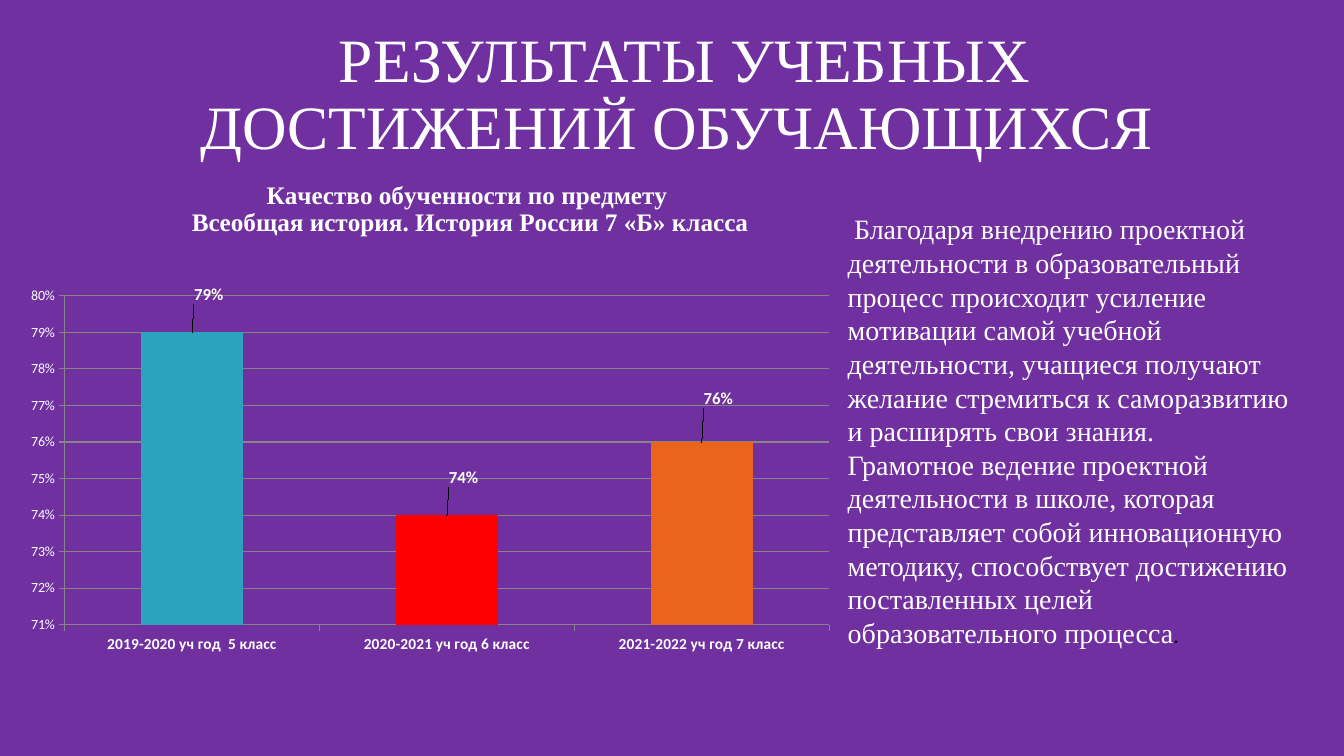
from lxml import etree
from pptx import Presentation
from pptx.chart.data import CategoryChartData
from pptx.dml.color import RGBColor
from pptx.enum.chart import XL_CHART_TYPE, XL_LABEL_POSITION, XL_TICK_MARK
from pptx.enum.text import MSO_ANCHOR, MSO_AUTO_SIZE, PP_ALIGN
from pptx.oxml.ns import qn
from pptx.util import Inches, Pt

COLUMNS = XL_CHART_TYPE.COLUMN_CLUSTERED
OUTSIDE_END = XL_LABEL_POSITION.OUTSIDE_END
TICK_OUT = XL_TICK_MARK.OUTSIDE
MIDDLE = MSO_ANCHOR.MIDDLE
GROW = MSO_AUTO_SIZE.SHAPE_TO_FIT_TEXT
CENTER = PP_ALIGN.CENTER

PURPLE = RGBColor(0x70, 0x30, 0xA0)
WHITE = RGBColor(0xFF, 0xFF, 0xFF)
BLACK = RGBColor(0x00, 0x00, 0x00)
GREY = RGBColor(0x86, 0x86, 0x86)
TEAL = RGBColor(0x2D, 0xA2, 0xBF)
RED = RGBColor(0xFF, 0x00, 0x00)
ORANGE = RGBColor(0xEB, 0x64, 0x1B)
SERIF, SANS = "Times New Roman", "Calibri"

TITLE_FONT = {"size": Pt(44), "name": SERIF}
BODY_FONT = {"size": Pt(20), "name": SERIF}
CHART_TITLE_FONT = {"size": Pt(18), "name": SERIF, "bold": True}
VALUE_FONT = {"size": Pt(10), "name": SANS}
CATEGORY_FONT = {"size": Pt(11), "name": SANS, "bold": True}
LABEL_FONT = {"size": Pt(12), "name": SANS, "bold": True}

TITLE = [[("РЕЗУЛЬТАТЫ УЧЕБНЫХ ДОСТИЖЕНИЙ ОБУЧАЮЩИХСЯ ", TITLE_FONT)]]
BODY = [
    [(" ", {"size": Pt(18), "name": SERIF}),
     ("Благодаря внедрению проектной деятельности в образовательный процесс "
      "происходит усиление мотивации самой учебной", BODY_FONT)],
    [("деятельности, учащиеся получают желание стремиться к саморазвитию "
      "и расширять свои знания. ", BODY_FONT)],
    [("Грамотное ведение проектной деятельности в школе, которая представляет "
      "собой инновационную методику, способствует достижению поставленных целей "
      "образовательного процесса", BODY_FONT),
     (".", {"size": Pt(16), "name": SANS, "color": BLACK})],
]
CHART_TITLE = ["Качество обученности по предмету",
               " Всеобщая история. История России 7 «Б» класса"]
# category, value, bar colour, label shift as fractions of the chart
RESULTS = [
    ("2019-2020 уч год  5 класс", 0.79, TEAL, (0.02, -0.04)),
    ("2020-2021 уч год 6 класс", 0.74, RED, (0.02, -0.04)),
    ("2021-2022 уч год 7 класс", 0.76, ORANGE, (0.02, -0.05)),
]


def set_font(font, color=WHITE, **values):
    for name, value in values.items():
        setattr(font, name, value)
    font.color.rgb = color


def add_text(slide, box, paragraphs, align=None, spacing=None):
    tf = slide.shapes.add_textbox(*map(Inches, box)).text_frame
    tf.word_wrap = True
    tf.vertical_anchor = MIDDLE
    for i, runs in enumerate(paragraphs):
        p = tf.paragraphs[0] if i == 0 else tf.add_paragraph()
        p.alignment, p.line_spacing = align, spacing
        for text, values in runs:
            r = p.add_run()
            r.text = text
            set_font(r.font, **values)
    return tf


def set_layout(parent, position, after):
    """Give a chart part a manual layout, placed after the named child."""
    for old in parent.findall(qn("c:layout")):
        parent.remove(old)
    layout = etree.Element(qn("c:layout"))
    manual = etree.SubElement(layout, qn("c:manualLayout"))
    for name, value in position.items():
        etree.SubElement(manual, qn(f"c:{name}")).set("val", str(value))
    if after is None:
        parent.insert(0, layout)
    else:
        parent.find(qn(after)).addnext(layout)


def style_axis(axis, values):
    axis.major_tick_mark = TICK_OUT
    axis.format.line.color.rgb = GREY
    axis.format.line.width = Pt(0.75)
    set_font(axis.tick_labels.font, **values)


def add_results_chart(slide, box):
    data = CategoryChartData(number_format="0%")
    data.categories = [row[0] for row in RESULTS]
    data.add_series("Series 1", [row[1] for row in RESULTS])
    chart = slide.shapes.add_chart(COLUMNS, *map(Inches, box), data).chart
    chart.has_legend = False
    set_font(chart.font, BLACK, **VALUE_FONT)

    title_tf = chart.chart_title.text_frame
    for i, line in enumerate(CHART_TITLE):
        p = title_tf.paragraphs[0] if i == 0 else title_tf.add_paragraph()
        r = p.add_run()
        r.text = line
        set_font(r.font, **CHART_TITLE_FONT)
    chart.chart_title.include_in_layout = False
    edge = {"xMode": "edge", "yMode": "edge"}
    set_layout(chart.chart_title._element, {**edge, "x": 0.22, "y": 0.02}, "c:tx")

    style_axis(chart.category_axis, CATEGORY_FONT)
    axis = chart.value_axis
    style_axis(axis, VALUE_FONT)
    axis.minimum_scale, axis.maximum_scale, axis.major_unit = 0.71, 0.8, 0.01
    axis.tick_labels.number_format = "0%"
    axis.tick_labels.number_format_is_linked = False
    axis.major_gridlines.format.line.color.rgb = GREY
    axis.major_gridlines.format.line.width = Pt(0.75)

    plot = chart.plots[0]
    plot.gap_width = 150
    plot.vary_by_categories = False
    series = plot.series[0]
    labels = series.data_labels
    labels.show_value = True
    labels.number_format, labels.number_format_is_linked = "0%", False
    set_font(labels.font, **LABEL_FONT)
    for i, (_, _, color, _) in enumerate(RESULTS):
        point = series.points[i]
        point.format.fill.solid()
        point.format.fill.fore_color.rgb = color
        set_font(point.data_label.font, **LABEL_FONT)
        point.data_label.position = OUTSIDE_END
    for label, row in zip(series._element.iter(qn("c:dLbl")), RESULTS):
        set_layout(label, dict(zip("xy", row[3])), "c:idx")

    plot_area = next(chart._chartSpace.iter(qn("c:plotArea")))
    set_layout(plot_area, {"layoutTarget": "inner", **edge,
                           "x": 0.078, "y": 0.221, "w": 0.922, "h": 0.557}, None)


def main():
    prs = Presentation()
    prs.slide_width, prs.slide_height = Inches(13.33), Inches(7.5)
    slide = prs.slides.add_slide(prs.slide_layouts[6])
    slide.background.fill.solid()
    slide.background.fill.fore_color.rgb = PURPLE
    add_text(slide, (1.04, 0.23, 11.5, 1.45), TITLE, CENTER, 0.9)
    add_results_chart(slide, (0, 1.64, 8.23, 5.86))
    add_text(slide, (8.31, 2.03, 4.77, 4.48), BODY).auto_size = GROW
    prs.save("out.pptx")


if __name__ == "__main__":
    main()
